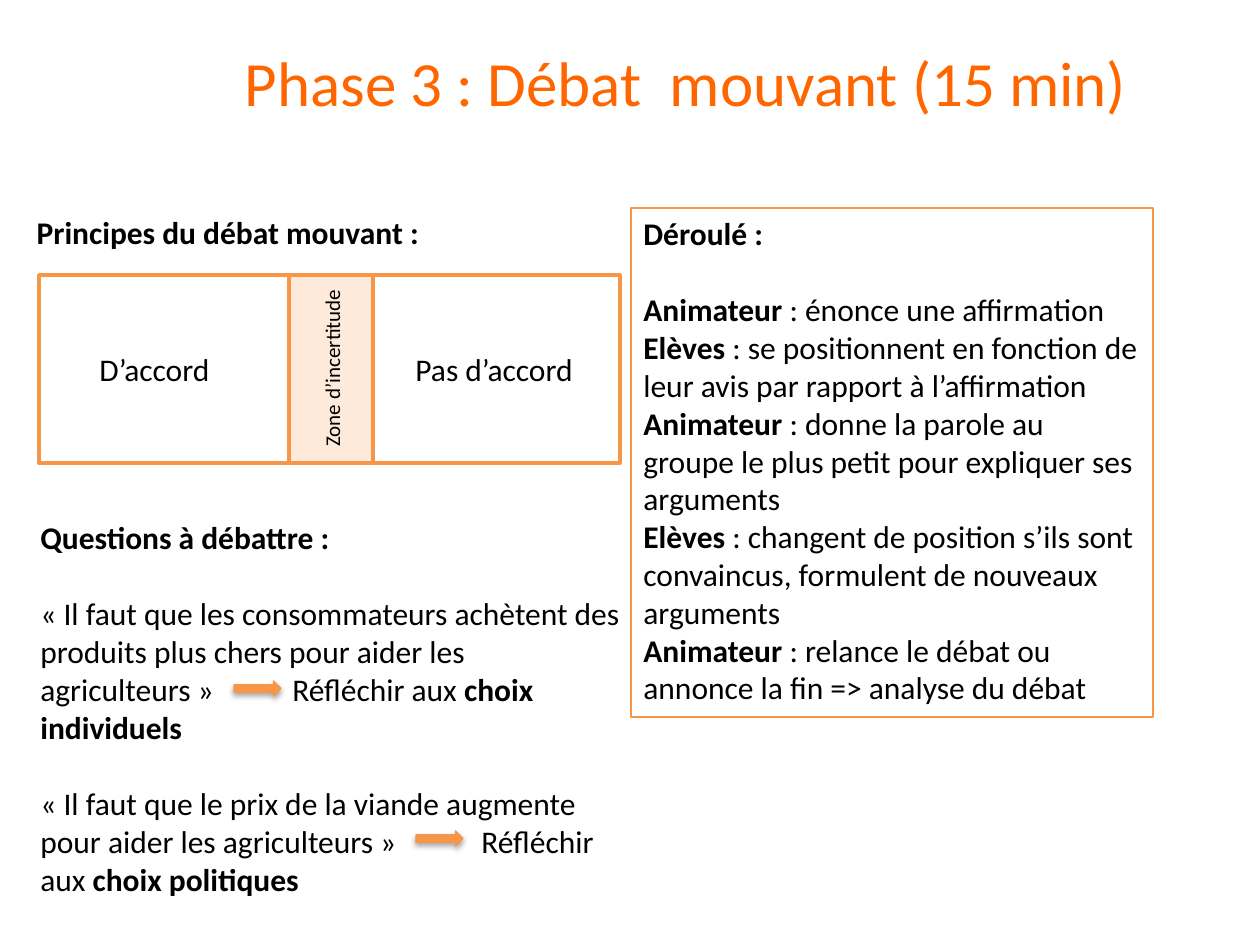
import pptx
import pptx.util
import pptx.oxml
import pptx.dml.color
import pptx.enum.shapes
import pptx.enum.text
import pptx.oxml.ns

RGBColor = pptx.dml.color.RGBColor
TITLE = RGBColor(0xFF, 0x66, 0x00)
ORANGE = RGBColor(0xF7, 0x96, 0x46)
PALE = RGBColor(0xFD, 0xEA, 0xDA)
WHITE = RGBColor(0xFF, 0xFF, 0xFF)
BLACK = RGBColor(0x00, 0x00, 0x00)
SHAPE = pptx.enum.shapes.MSO_SHAPE
ALIGN = pptx.enum.text.PP_ALIGN
ANCHOR = pptx.enum.text.MSO_ANCHOR
AUTO = pptx.enum.text.MSO_AUTO_SIZE
NS = pptx.oxml.ns.nsdecls("a")
SCALE = 914400 / 126
LINE_GAP = 22
TAB_STEP = 63


def px(*values):
    return [round(v * SCALE) for v in values]


def write(sp, paragraphs, size=18, color=BLACK, wrap=True, anchor=ANCHOR.TOP):
    tf = sp.text_frame
    tf.word_wrap = wrap
    tf.auto_size = AUTO.NONE
    tf.vertical_anchor = anchor
    for i, (gap, runs) in enumerate(paragraphs):
        p = tf.paragraphs[0] if i == 0 else tf.add_paragraph()
        p.alignment = ALIGN.LEFT
        p.space_before = pptx.util.Pt(gap)
        for text, bold in runs:
            r = p.add_run()
            r.text = text
            r.font.name = "Calibri"
            r.font.size = pptx.util.Pt(size)
            r.font.bold = bold
            r.font.color.rgb = color


prs = pptx.Presentation()
prs.slide_width, prs.slide_height = px(1260, 945)
s = prs.slides.add_slide(prs.slide_layouts[1])

title, body = s.shapes.title, s.placeholders[1]
title.left, title.top, title.width, title.height = px(232, -35, 1066, 232)
write(title, [(0, [("Phase 3 : Débat  mouvant (15 min)", False)])], 36, TITLE, anchor=ANCHOR.MIDDLE)

body.left, body.top, body.width, body.height = px(24, 207, 1215, 585)
write(body, [(0, [("Principes du débat mouvant :", True)])])
pPr = body.text_frame.paragraphs[0]._p.get_or_add_pPr()
pPr.set("marL", "0")
pPr.set("indent", "0")
pPr.append(pptx.oxml.parse_xml(f"<a:buNone {NS}/>"))

for x, w, fill in [(39, 581, WHITE), (289, 84, PALE)]:
    sp = s.shapes.add_shape(SHAPE.RECTANGLE, *px(x, 275, w, 188))
    sp.shadow.inherit = False
    sp.fill.solid()
    sp.fill.fore_color.rgb = fill
    sp.line.color.rgb = ORANGE
    sp.line.width = pptx.util.Pt(2)

for text, x, y, w, h, size, angle in [
    ("D’accord", 87, 344, 144, 50, 18, 0),
    ("Pas d’accord", 403, 344, 199, 50, 18, 0),
    ("Zone d’incertitude", 221, 329, 222, 38, 12, 270),
]:
    sp = s.shapes.add_textbox(*px(x, y, w, h))
    sp.rotation = angle
    write(sp, [(0, [(text, False)])], size, wrap=angle != 0)

steps = s.shapes.add_shape(SHAPE.RECTANGLE, *px(631, 208, 522, 509))
steps.shadow.inherit = False
steps.fill.background()
steps.line.color.rgb = ORANGE
steps.line.width = pptx.util.Pt(0.75)
write(steps, [
    (0, [("Déroulé :", True)]),
    (LINE_GAP, [("Animateur", True), (" : énonce une affirmation", False)]),
    (0, [("Elèves", True), (" : se positionnent en fonction de leur avis par rapport à l’affirmation", False)]),
    (0, [("Animateur ", True), (": donne la parole au groupe le plus petit pour expliquer ses arguments", False)]),
    (0, [("Elèves ", True), (": changent de position s’ils sont convaincus, formulent de nouveaux arguments", False)]),
    (0, [("Animateur", True), (" : relance le débat ou annonce la fin => analyse du débat", False)]),
])

questions = s.shapes.add_textbox(*px(28, 512, 607, 471))
write(questions, [
    (0, [("Questions à débattre :", True)]),
    (LINE_GAP, [
        ("« Il faut que les consommateurs achètent des produits plus chers pour aider les agriculteurs » \t\tRéfléchir aux ", False),
        ("choix individuels", True),
    ]),
    (LINE_GAP, [
        ("« Il faut que le prix de la viande augmente pour aider les agriculteurs »\t\tRéfléchir aux ", False),
        ("choix politiques", True),
    ]),
])
stops = "".join(f'<a:tab pos="{pos}" algn="l"/>' for pos in px(*range(TAB_STEP, 8 * TAB_STEP, TAB_STEP)))
for p in questions.text_frame.paragraphs[1:]:
    p._p.get_or_add_pPr().append(pptx.oxml.parse_xml(f"<a:tabLst {NS}>{stops}</a:tabLst>"))

for x, y in [(234, 681), (416, 831)]:
    sp = s.shapes.add_shape(SHAPE.RIGHT_ARROW, *px(x, y, 47, 15))
    sp.fill.solid()
    sp.fill.fore_color.rgb = ORANGE
    sp.line.color.rgb = ORANGE
    sp.line.width = pptx.util.Pt(0.75)
    sp._element.spPr.append(pptx.oxml.parse_xml(
        f'<a:effectLst {NS}><a:outerShdw blurRad="40000" dist="23000" dir="5400000" rotWithShape="0">'
        '<a:srgbClr val="000000"><a:alpha val="35000"/></a:srgbClr></a:outerShdw></a:effectLst>'))

prs.save("out.pptx")
